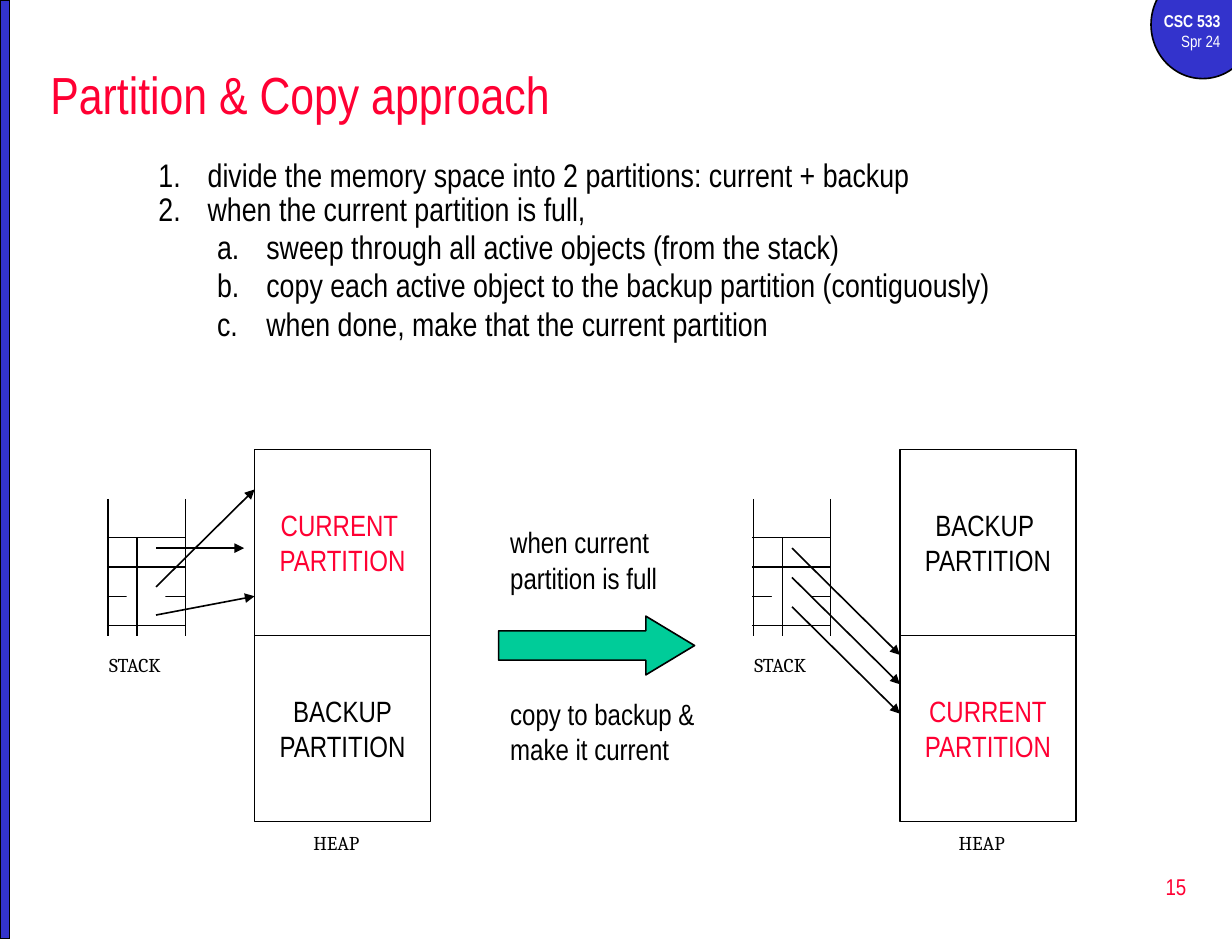
from pptx import Presentation
from pptx.util import Inches, Pt
from pptx.dml.color import RGBColor
from pptx.enum.shapes import MSO_SHAPE as SHAPE, MSO_CONNECTOR as LINK
from pptx.enum.text import PP_ALIGN as ALIGN, MSO_ANCHOR as ANCHOR, MSO_AUTO_SIZE as FIT
from pptx.oxml.ns import qn
from lxml.etree import SubElement

BLACK, WHITE, RED, BLUE, GREEN = "000000", "FFFFFF", "FF0033", "3333CC", "00CC99"


def paint(fmt, hue):
    fmt.solid()
    fmt.fore_color.rgb = RGBColor.from_string(hue)


def write(shape, lines, size=18, font="Arial Narrow", hue=BLACK, bold=False,
          align=ALIGN.LEFT, anchor=ANCHOR.TOP, wrap=True, inset=None):
    """Fill a shape with one paragraph per line and return the paragraphs."""
    frame = shape.text_frame
    frame.auto_size = FIT.NONE
    frame.word_wrap = wrap
    frame.vertical_anchor = anchor
    if inset is not None:
        frame.margin_left = frame.margin_right = Inches(inset)
        frame.margin_top = frame.margin_bottom = Inches(inset)
    frame.text = "\n".join(lines)
    for para in frame.paragraphs:
        para.alignment = align
        for run in para.runs:
            run.font.name, run.font.size, run.font.bold = font, Pt(size), bold
            paint(run.font.fill, hue)
    return frame.paragraphs


def place(shape, x, y, w, h):
    shape.left, shape.top = Inches(x), Inches(y)
    shape.width, shape.height = Inches(w), Inches(h)


def label(shapes, x, y, w, h, lines, **fmt):
    box = shapes.add_textbox(Inches(x), Inches(y), Inches(w), Inches(h))
    return write(box, lines, **fmt)


def block(shapes, kind, x, y, w, h, fill=None, line=BLACK):
    shape = shapes.add_shape(kind, Inches(x), Inches(y), Inches(w), Inches(h))
    shape.shadow.inherit = False
    if fill:
        paint(shape.fill, fill)
    else:
        shape.fill.background()
    if line:
        paint(shape.line.fill, line)
        shape.line.width = Pt(1)
    else:
        shape.line.fill.background()
    return shape


def link(shapes, x1, y1, x2, y2, width=1.0, arrow=False):
    line = shapes.add_connector(LINK.STRAIGHT, Inches(x1), Inches(y1),
                                Inches(x2), Inches(y2))
    paint(line.line.fill, BLACK)
    line.line.width = Pt(width)
    props = line._element.spPr
    SubElement(props, qn("a:effectLst"))
    if arrow:
        SubElement(props.find(qn("a:ln")), qn("a:tailEnd"), type="triangle")


def frame_page(shapes, wide, high):
    # Course badge, side bar and page number
    block(shapes, SHAPE.OVAL, wide - 0.69, -0.25, 0.88, 0.92, BLUE)
    top, term = label(shapes, wide - 0.83, 0.04, 0.83, 0.46, ["CSC 533", "Spr 24"],
                      size=10, hue=WHITE, align=ALIGN.RIGHT)
    top.runs[0].font.size, top.runs[0].font.bold = Pt(10.5), True
    block(shapes, SHAPE.RECTANGLE, 0, 0, 0.08, high, BLUE)
    label(shapes, wide - 2.48, high - 0.71, 2.19, 0.53, ["15"], size=14, hue=RED,
          align=ALIGN.RIGHT, anchor=ANCHOR.MIDDLE)


def steps(body, x, y, w, h, items):
    place(body, x, y, w, h)
    paras = write(body, [text for _, text in items], size=20)
    styles = {1: (0.92, 0.8, "arabicPeriod"), 2: (1.42, 0.9, "alphaLcPeriod")}
    for para, (level, _) in zip(paras, items):
        margin, spacing, number = styles[level]
        para.level = level
        para.line_spacing, para.space_before = spacing, Pt(2)
        props = para._p.get_or_add_pPr()
        props.set("marL", str(Inches(margin)))
        props.set("indent", str(Inches(-0.42)))
        SubElement(props, qn("a:buFont"), typeface="+mj-lt")
        SubElement(props, qn("a:buAutoNum"), type=number)


def memory(shapes, x, y, halves, arrows):
    """Stack at the left, heap of two halves at the right; arrows join them."""
    group = shapes.add_group_shape().shapes
    tag = dict(size=12, font="Cambria", wrap=False, inset=0)
    # Heap
    label(group, x + 1.84, y + 3.25, 0.45, 0.2, ["HEAP"], **tag)
    for i, (lines, hue) in enumerate(halves):
        half = block(group, SHAPE.RECTANGLE, x + 1.34, y + i * 1.585, 1.5, 1.585)
        write(half, lines, hue=hue, align=ALIGN.CENTER, anchor=ANCHOR.MIDDLE, wrap=False)
    # Stack
    block(group, SHAPE.RECTANGLE, x, y + 1.67, 0.83, 0.33, WHITE, None)
    label(group, x + 0.1, y + 1.73, 0.56, 0.2, ["STACK"], **tag)
    for side in (0.09, 0.75):
        link(group, x + side, y + 0.42, x + side, y + 1.59, 0.75)
    for row in range(4):
        level = y + 0.75 + row * 0.25
        link(group, x + 0.08, level, x + 0.75, level, 0.75)
    block(group, SHAPE.RECTANGLE, x + 0.25, y + 1.25, 0.33, 0.17, WHITE, None)
    link(group, x + 0.34, y + 0.75, x + 0.34, y + 1.59)
    # References
    for x1, y1, x2, y2 in arrows:
        link(group, x + x1, y + y1, x + x2, y + y2, arrow=True)


def change(shapes, x, y):
    group = shapes.add_group_shape().shapes
    arrow = block(group, SHAPE.RIGHT_ARROW, x, y + 0.83, 1.67, 0.5, GREEN)
    arrow.adjustments[0], arrow.adjustments[1] = 0.5, 0.83
    label(group, x, y, 1.58, 0.7, ["when current partition is full"])
    label(group, x, y + 1.46, 1.83, 0.7, ["copy to backup & make it current"])


def main():
    deck = Presentation()
    wide, high = 10.5, 8
    deck.slide_width, deck.slide_height = Inches(wide), Inches(high)
    slide = deck.slides.add_slide(deck.slide_layouts[1])
    shapes = slide.shapes
    frame_page(shapes, wide, high)

    # Title and list
    place(shapes.title, 0.33, 0.42, 9.92, 0.75)
    write(shapes.title, ["Partition & Copy approach"], size=32, hue=RED,
          anchor=ANCHOR.MIDDLE)
    steps(slide.placeholders[1], 0.75, 1.33, 9.52, 2, [
        (1, "divide the memory space into 2 partitions: current + backup"),
        (1, "when the current partition is full,"),
        (2, "sweep through all active objects (from the stack)"),
        (2, "copy each active object to the backup partition (contiguously)"),
        (2, "when done, make that the current partition")])

    # Memory before and after the copy
    memory(shapes, 0.83, 3.83,
           [(["CURRENT ", "PARTITION"], RED), (["BACKUP", "PARTITION"], BLACK)],
           [(0.5, 1.41, 1.34, 1.25), (0.5, 1.17, 1.34, 0.34), (0.5, 0.84, 1.25, 0.84)])
    memory(shapes, 6.33, 3.83,
           [(["BACKUP ", "PARTITION"], BLACK), (["CURRENT", "PARTITION"], RED)],
           [(0.42, 0.84 + i * 0.25, 1.34, 1.75 + i * 0.25) for i in range(3)])
    change(shapes, 4.25, 4.42)
    deck.save("out.pptx")


if __name__ == "__main__":
    main()
